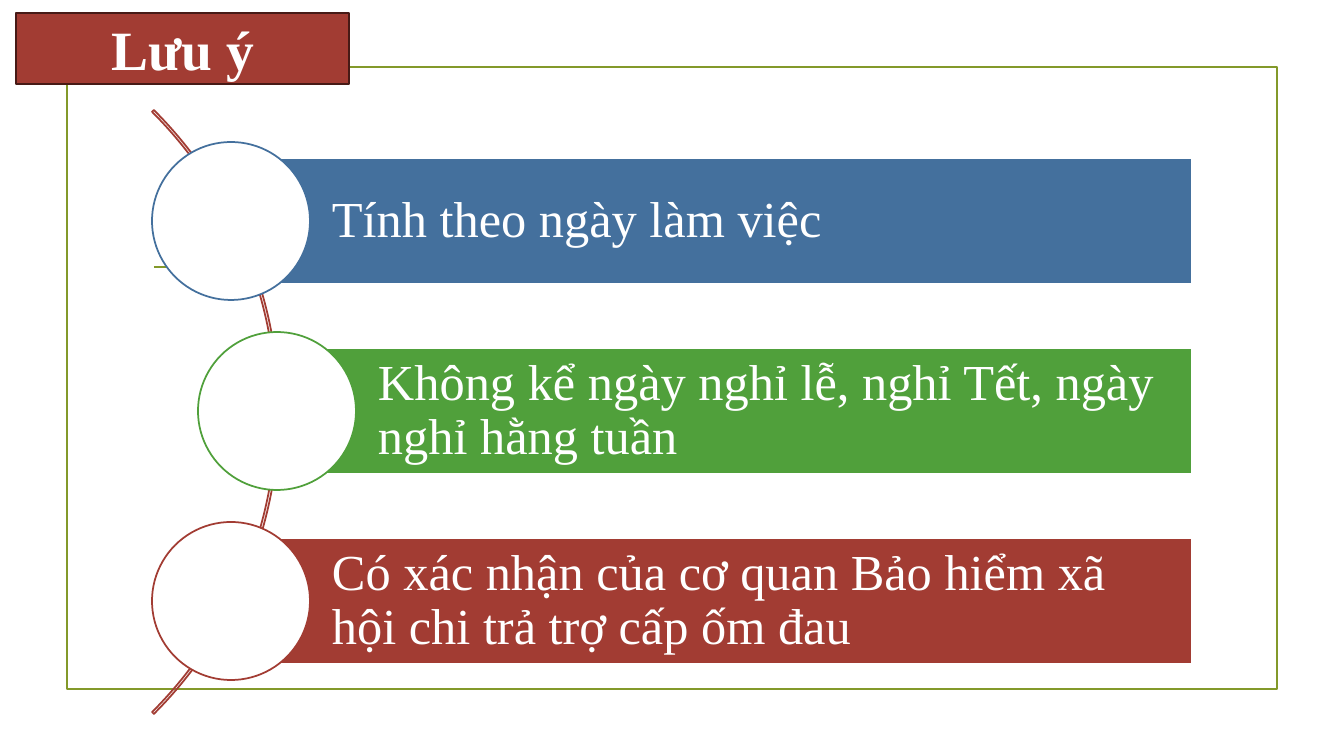
from lxml import etree
from pptx import Presentation
from pptx.dml.color import RGBColor
from pptx.enum.shapes import MSO_CONNECTOR, MSO_SHAPE
from pptx.enum.text import MSO_ANCHOR, PP_ALIGN
from pptx.oxml.ns import qn
from pptx.util import Emu, Pt

RECT, OVAL, ARC = MSO_SHAPE.RECTANGLE, MSO_SHAPE.OVAL, MSO_SHAPE.BLOCK_ARC
STRAIGHT = MSO_CONNECTOR.STRAIGHT
MIDDLE = MSO_ANCHOR.MIDDLE
LEFT, CENTER = PP_ALIGN.LEFT, PP_ALIGN.CENTER

EMU_PER_PX = 914400 / 100.8
COLORS = {
    "white": "FFFFFF",
    "olive": "83992A",
    "blue": "44709D",
    "green": "50A03B",
    "red": "A23C33",
    "maroon": "471A16",
}
TITLE_FONT = {"name": "Times New Roman", "size": Pt(39.6), "bold": True}
NOTE_FONT = {"name": "Times New Roman", "size": Pt(36), "bold": False}
NOTES = [
    ("Tính theo ngày làm việc", "blue", 231),
    ("Không kể ngày nghỉ lễ, nghỉ Tết, ngày nghỉ hằng tuần", "green", 277),
    ("Có xác nhận của cơ quan Bảo hiểm xã hội chi trả trợ cấp ốm đau", "red", 231),
]
FIRST_CENTER, PITCH = 221, 190
BAR_RIGHT, BAR_HEIGHT, RADIUS = 1192, 126, 79


def px(n):
    """Turn pixels into EMU."""
    return Emu(round(n * EMU_PER_PX))


def color(name):
    """Return the named colour."""
    return RGBColor.from_string(COLORS[name])


def add_box(s, kind, box, fill, line, width=1.25):
    """Add a preset shape with an optional fill and an outline."""
    sp = s.shapes.add_shape(kind, *map(px, box))
    sp.shadow.inherit = False
    if fill:
        sp.fill.solid()
        sp.fill.fore_color.rgb = color(fill)
    else:
        sp.fill.background()
    sp.line.color.rgb = color(line)
    sp.line.width = Pt(width)
    return sp


def add_rule(s, x1, x2, y):
    """Add a thin horizontal rule."""
    line = s.shapes.add_connector(STRAIGHT, px(x1), px(y), px(x2), px(y))
    line.line.color.rgb = color("olive")
    line.line.width = Pt(1.25)
    etree.SubElement(line._element.spPr, qn("a:effectLst"))


def set_text(sp, text, font, align, spacing=1.0, inset=10):
    """Write one white paragraph into a shape."""
    tf = sp.text_frame
    frame = {
        "word_wrap": True,
        "vertical_anchor": MIDDLE,
        "margin_left": px(inset),
        "margin_right": px(10),
    }
    for name, value in frame.items():
        setattr(tf, name, value)
    p = tf.paragraphs[0]
    p.alignment = align
    p.line_spacing = spacing
    r = p.add_run()
    r.text = text
    for name, value in font.items():
        setattr(r.font, name, value)
    r.font.color.rgb = color("white")


def add_note(s, text, accent, x, y):
    """Add a coloured bar with a white circle centred on its left end."""
    bar = (x, y - BAR_HEIGHT // 2, BAR_RIGHT - x, BAR_HEIGHT)
    sp = add_box(s, RECT, bar, accent, "white", 2)
    set_text(sp, text, NOTE_FONT, LEFT, 0.9, 101)
    circle = (x - RADIUS, y - RADIUS, 2 * RADIUS, 2 * RADIUS)
    add_box(s, OVAL, circle, "white", accent)


def add_arc(s):
    """Add the thin arc that links the circles."""
    sp = add_box(s, ARC, (-575, -15, 854, 854), None, "red")
    for i, value in enumerate((189, 27, 0.003)):
        sp.adjustments[i] = value


def main():
    """Build the slide and save it."""
    prs = Presentation()
    prs.slide_width, prs.slide_height = px(1344), px(756)
    s = prs.slides.add_slide(prs.slide_layouts[6])
    add_box(s, RECT, (67, 67, 1210, 622), None, "olive")
    add_rule(s, 154, 1190, 267)
    title = add_box(s, RECT, (16, 13, 333, 71), "red", "maroon")
    set_text(title, "Lưu ý", TITLE_FONT, CENTER)
    add_arc(s)
    for i, (text, accent, x) in enumerate(NOTES):
        add_note(s, text, accent, x, FIRST_CENTER + i * PITCH)
    prs.save("out.pptx")


if __name__ == "__main__":
    main()
